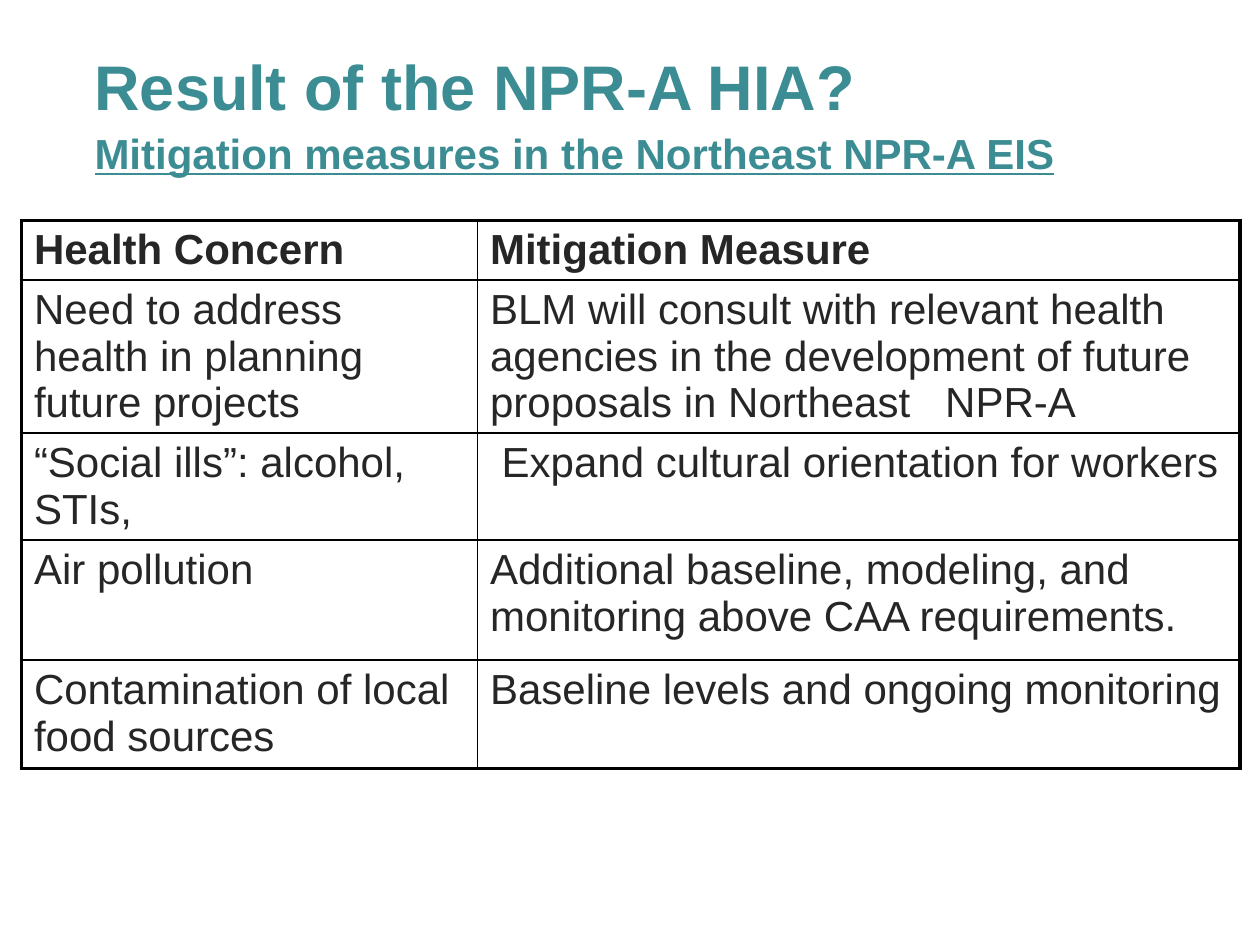
import pptx
import pptx.dml.color
import pptx.enum.text
import pptx.oxml.ns
import pptx.util
from lxml import etree
from pptx.util import Inches

COLORS = {"title": "3C8C93", "text": "262626", "border": "000000"}
FONT = "Arial"
THIN, THICK = 1, 2.25
COL_WIDTHS = [3.62, 6.05]
ROW_HEIGHTS = [0.47, 1.21, 0.85, 0.95, 0.86]
ROWS = [
    ("Health Concern", "Mitigation Measure"),
    ("Need to address health in planning future projects",
     "BLM will consult with relevant health agencies in the development "
     "of future proposals in Northeast   NPR-A"),
    ("“Social ills”: alcohol, STIs,", " Expand cultural orientation for workers"),
    ("Air pollution",
     "Additional baseline, modeling, and monitoring above CAA requirements."),
    ("Contamination of local food sources", "Baseline levels and ongoing monitoring"),
]


def add_run(p, text, size, color, bold=False, underline=False):
    """Add one formatted run to a paragraph."""
    r = p.add_run()
    r.text = text
    r.font.name = FONT
    r.font.size = pptx.util.Pt(size)
    r.font.bold = bold
    r.font.underline = underline
    r.font.color.rgb = pptx.dml.color.RGBColor.from_string(COLORS[color])


def set_title(s):
    """Place the title placeholder and fill its two lines."""
    sp = s.shapes.title
    sp.left, sp.top, sp.width, sp.height = map(Inches, (0.75, 0.33, 8.67, 0.67))
    tf = sp.text_frame
    tf.margin_left = tf.margin_top = tf.margin_right = tf.margin_bottom = 0
    tf.word_wrap = True
    tf.auto_size = pptx.enum.text.MSO_AUTO_SIZE.NONE
    tf.vertical_anchor = pptx.enum.text.MSO_ANCHOR.TOP
    p = tf.paragraphs[0]
    p.alignment = pptx.enum.text.PP_ALIGN.LEFT
    p.line_spacing = 1.08
    add_run(p, "Result of the NPR-A HIA?", 36, "title", bold=True)
    p.add_line_break()
    add_run(p, "Mitigation measures in the Northeast NPR-A EIS", 24, "title",
            bold=True, underline=True)


def set_border(cell, side, width):
    """Draw one side of a cell's border."""
    qn = pptx.oxml.ns.qn
    tc_pr = cell._tc.get_or_add_tcPr()
    ln = etree.SubElement(tc_pr, qn("a:ln" + side), w=str(pptx.util.Pt(width)))
    fill = etree.SubElement(ln, qn("a:solidFill"))
    etree.SubElement(fill, qn("a:srgbClr"), val=COLORS["border"])


def add_table(s):
    """Add the table with a thick frame and thin inner lines."""
    n_rows, n_cols = len(ROWS), len(COL_WIDTHS)
    table = s.shapes.add_table(
        n_rows, n_cols, Inches(0.17), Inches(1.75),
        Inches(sum(COL_WIDTHS)), Inches(sum(ROW_HEIGHTS))).table
    table.first_row = table.horz_banding = False
    for column, width in zip(table.columns, COL_WIDTHS):
        column.width = Inches(width)
    for i, (height, texts) in enumerate(zip(ROW_HEIGHTS, ROWS)):
        table.rows[i].height = Inches(height)
        for j, text in enumerate(texts):
            cell = table.cell(i, j)
            outer = {"L": j == 0, "R": j == n_cols - 1,
                     "T": i == 0, "B": i == n_rows - 1}
            for side, is_outer in outer.items():
                set_border(cell, side, THICK if is_outer else THIN)
            cell.fill.background()
            add_run(cell.text_frame.paragraphs[0], text, 24, "text", bold=i == 0)


def main():
    """Build the slide and save it."""
    prs = pptx.Presentation()
    prs.slide_width, prs.slide_height = Inches(10), Inches(7.5)
    s = prs.slides.add_slide(prs.slide_layouts[5])
    set_title(s)
    add_table(s)
    prs.save("out.pptx")


if __name__ == "__main__":
    main()
